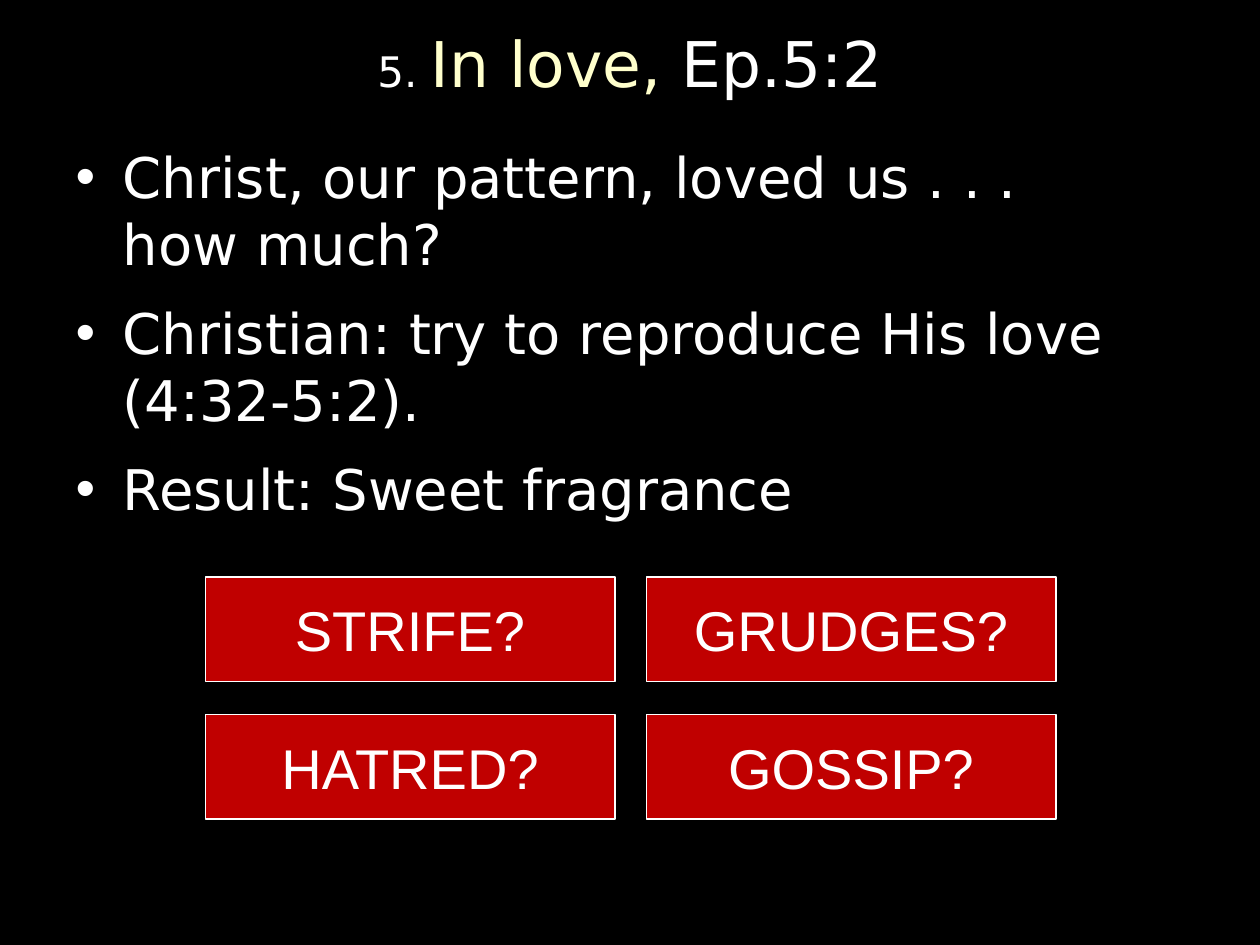
"""Build the slide on walking in love, with its four questions in a grid."""
import pptx
import pptx.dml.color
import pptx.enum.shapes
import pptx.enum.text
import pptx.util


def color(value):
    return pptx.dml.color.RGBColor.from_string(value)


def style(span, size, face, tint):
    span.font.size = pptx.util.Pt(size)
    span.font.name = face
    span.font.color.rgb = color(tint)


WHITE, CREAM, RED, BLACK = "FFFFFF", "FFFFCC", "C00000", "000000"
TITLE_PARTS = [("5. ", 24, WHITE), ("In love, ", 36, CREAM), ("Ep.5:2", 36, WHITE)]
POINTS = [
    "Christ, our pattern, loved us . . . \vhow much?",
    "Christian: try to reproduce His love (4:32-5:2).",
    "Result: Sweet fragrance",
]
QUESTIONS = [["STRIFE?", "GRUDGES?"], ["HATRED?", "GOSSIP?"]]

deck = pptx.Presentation()
deck.slide_width = pptx.util.Inches(10)
deck.slide_height = pptx.util.Inches(7.5)
page = deck.slides.add_slide(deck.slide_layouts[1])
page.background.fill.solid()
page.background.fill.fore_color.rgb = color(BLACK)

title, body = page.shapes.title, page.placeholders[1]
for holder, top, height in [(title, 0.08, 0.83), (body, 1.08, 5.83)]:
    holder.left, holder.width = pptx.util.Inches(0.5), pptx.util.Inches(9)
    holder.top, holder.height = pptx.util.Inches(top), pptx.util.Inches(height)
    holder.text_frame.auto_size = pptx.enum.text.MSO_AUTO_SIZE.NONE

heading = title.text_frame.paragraphs[0]
heading.alignment = pptx.enum.text.PP_ALIGN.CENTER
for words, size, tint in TITLE_PARTS:
    span = heading.add_run()
    span.text = words
    style(span, size, "DejaVu Sans", tint)

body.text_frame.text = "\n".join(POINTS)
for para in body.text_frame.paragraphs:
    para.space_after = pptx.util.Pt(6)
    for span in para.runs:
        style(span, 32, "DejaVu Sans", WHITE)

box_width, box_height = pptx.util.Inches(3.25), pptx.util.Inches(0.83)
column_step, row_step = pptx.util.Inches(3.5), pptx.util.Inches(1.09)
grid_left, grid_top = pptx.util.Inches(1.63), pptx.util.Inches(4.58)
for row, questions in enumerate(QUESTIONS):
    for column, question in enumerate(questions):
        box = page.shapes.add_shape(
            pptx.enum.shapes.MSO_SHAPE.RECTANGLE,
            grid_left + column * column_step,
            grid_top + row * row_step,
            box_width,
            box_height,
        )
        box.shadow.inherit = False
        box.fill.solid()
        box.fill.fore_color.rgb = color(RED)
        box.line.color.rgb = color(WHITE)
        box.line.width = pptx.util.Pt(1)
        box.text_frame.text = question
        box.text_frame.vertical_anchor = pptx.enum.text.MSO_ANCHOR.MIDDLE
        para = box.text_frame.paragraphs[0]
        para.alignment = pptx.enum.text.PP_ALIGN.CENTER
        style(para.runs[0], 32, "Arial", WHITE)

deck.save("out.pptx")
